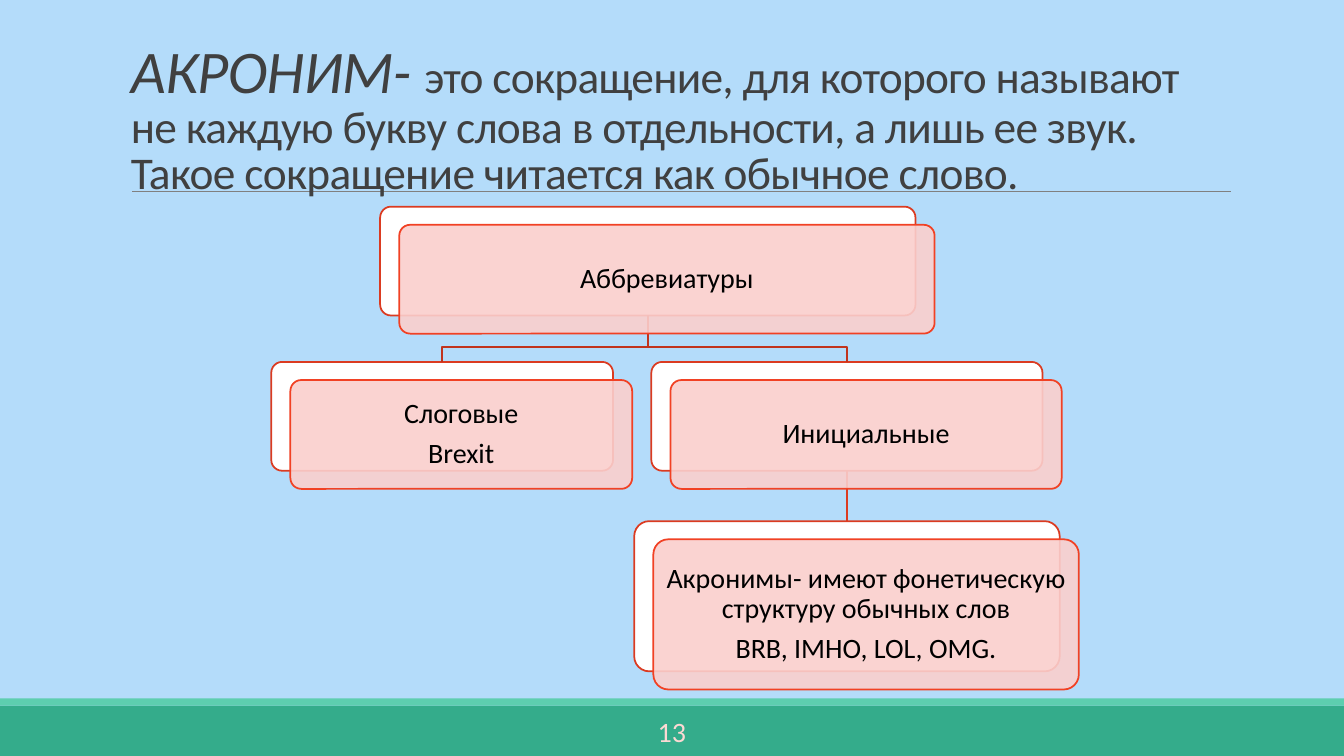
import pptx
import pptx.util
import pptx.dml.color
import pptx.enum.shapes
import pptx.enum.text
import pptx.oxml
import pptx.oxml.ns
import lxml.etree

Inches = pptx.util.Inches
Pt = pptx.util.Pt
RGBColor = pptx.dml.color.RGBColor
Shape = pptx.enum.shapes.MSO_SHAPE
Align = pptx.enum.text.PP_ALIGN
Anchor = pptx.enum.text.MSO_ANCHOR
qn = pptx.oxml.ns.qn

SKY = RGBColor(0xB4, 0xDC, 0xFA)
GREEN = RGBColor(0x34, 0xAC, 0x8B)
MINT = RGBColor(0x5D, 0xCE, 0xAF)
GREY = RGBColor(0x80, 0x80, 0x80)
DARK = RGBColor(0x40, 0x40, 0x40)
PALE = RGBColor(0xFC, 0xD9, 0xD3)
PINK = RGBColor(0xFA, 0xCF, 0xCD)
WHITE = RGBColor(0xFF, 0xFF, 0xFF)
BLACK = RGBColor(0, 0, 0)
RED = RGBColor(0xF1, 0x41, 0x24)
BRICK = RGBColor(0xDB, 0x3B, 0x21)
RUST = RGBColor(0xC1, 0x34, 0x1D)


class Deck:
    font = "Calibri"
    size = 20
    edge = 1.25
    inset = 0.08

    def __init__(self, slide):
        self.slide = slide
        self.shapes = slide.shapes

    def band(self, top, height, color):
        bar = self.shapes.add_shape(Shape.RECTANGLE, 0, Inches(top), Inches(13.33), Inches(height))
        bar.shadow.inherit = False
        bar.fill.solid()
        bar.fill.fore_color.rgb = color
        bar.line.fill.background()

    def card(self, left, top, width, height, fill, line):
        card = self.shapes.add_shape(Shape.ROUNDED_RECTANGLE, Inches(left), Inches(top),
                                     Inches(width), Inches(height))
        card.adjustments[0] = 0.1
        card.shadow.inherit = False
        card.fill.solid()
        card.fill.fore_color.rgb = fill
        card.line.color.rgb = line
        card.line.width = Pt(self.edge)
        return card

    def label(self, card, lines):
        color = card.fill._xPr.find(qn("a:solidFill"))[0]
        lxml.etree.SubElement(color, qn("a:alpha")).set("val", "90000")
        frame = card.text_frame
        frame.word_wrap = True
        frame.vertical_anchor = Anchor.MIDDLE
        frame.margin_left = frame.margin_right = Inches(self.inset)
        frame.margin_top = frame.margin_bottom = Inches(self.inset)
        frame.text = "\n".join(lines)
        for par in frame.paragraphs:
            par.alignment = Align.CENTER
            par.line_spacing = 0.9
            self.style(par.runs[0], self.size, BLACK)
        for par in frame.paragraphs[:-1]:
            par.space_after = Pt(0.35 * self.size)

    def style(self, run, size, color):
        run.font.name = self.font
        run.font.size = Pt(size)
        run.font.color.rgb = color

    def text(self, left, top, width, height, anchor, words):
        box = self.shapes.add_textbox(Inches(left), Inches(top), Inches(width), Inches(height))
        frame = box.text_frame
        frame.word_wrap = True
        frame.vertical_anchor = anchor
        par = frame.paragraphs[0]
        for word, size, color in words:
            run = par.add_run()
            run.text = word
            self.style(run, size, color)
        return par

    def line(self, start, end, color, width):
        line = self.shapes.add_connector(pptx.enum.shapes.MSO_CONNECTOR.STRAIGHT,
                                         *[Inches(n) for n in start + end])
        line.line.color.rgb = color
        line.line.width = Pt(width)
        lxml.etree.SubElement(line._element.spPr, qn("a:effectLst"))
        return line

    def branch(self, points):
        spots = [(Inches(x), Inches(y)) for x, y in points]
        pen = self.shapes.build_freeform(*spots[0])
        pen.add_line_segments(spots[1:], close=False)
        bend = pen.convert_to_shape()
        bend.shadow.inherit = False
        bend.fill.background()
        bend.line.color.rgb = RUST
        bend.line.width = Pt(self.edge)


def main():
    show = pptx.Presentation()
    show.slide_width = Inches(13.33)
    show.slide_height = Inches(7.5)
    slide = show.slides.add_slide(show.slide_layouts[6])
    slide.background.fill.solid()
    slide.background.fill.fore_color.rgb = SKY
    deck = Deck(slide)

    deck.band(7, 0.5, GREEN)
    deck.band(6.93, 0.07, MINT)
    deck.line((1.31, 1.9), (12.21, 1.9), GREY, 0.5)
    title = deck.text(1.2, 0.43, 11, 1.59, Anchor.BOTTOM, [
        ("АКРОНИМ- ", 43.2, DARK),
        ("это сокращение, для которого называют не каждую букву слова в отдельности, "
         "а лишь ее звук. Такое сокращение читается как обычное слово.", 32.4, DARK)])
    title.line_spacing = 0.85
    title.runs[0].font.italic = True
    for run in title.runs:
        run.font._element.set("spc", "-50")
    page = deck.text(4.03, 7.06, 5.27, 0.4, Anchor.MIDDLE, [("13", 20, PALE)])
    page.alignment = Align.CENTER

    nodes = [
        (3.77, 2.05, 5.31, 1.08, ["Аббревиатуры"]),
        (2.69, 3.59, 3.39, 1.08, ["Слоговые", "Brexit"]),
        (6.46, 3.59, 3.88, 1.08, ["Инициальные"]),
        (6.29, 5.17, 4.22, 1.49, ["Акронимы- имеют фонетическую структуру обычных слов",
                                  "BRB, IMHO, LOL, OMG."]),
    ]
    backs = [deck.card(*node[:4], WHITE, BRICK) for node in nodes]
    mids = [left + width / 2 for left, top, width, height, lines in nodes]
    for mid in mids[1:3]:
        deck.branch([(mids[0], 3.13), (mids[0], 3.44), (mid, 3.44), (mid, 3.59)])
    stem = deck.line((mids[2], 4.67), (mids[3], 5.17), BRICK, deck.edge)
    stem.begin_connect(backs[2], 2)
    stem.end_connect(backs[3], 0)
    for left, top, width, height, lines in nodes:
        front = deck.card(left + 0.19, top + 0.18, width, height, PINK, RED)
        deck.label(front, lines)

    show.save("out.pptx")


if __name__ == "__main__":
    main()
